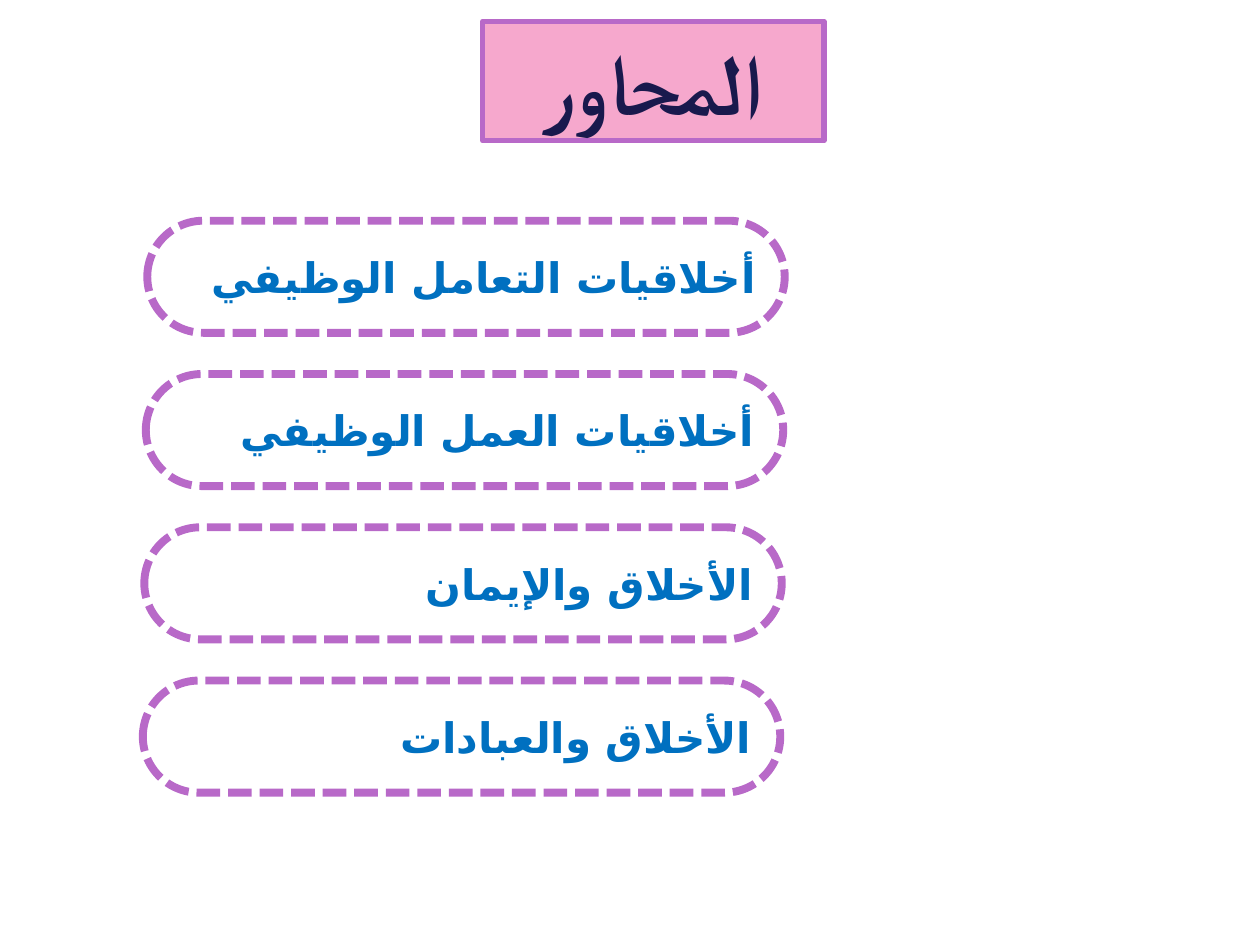
"""Build the slide that lists the four themes of work ethics."""
import lxml.etree
import pptx
import pptx.dml.color
import pptx.enum.dml
import pptx.enum.shapes
import pptx.enum.text
import pptx.oxml.ns
import pptx.util

Cm = pptx.util.Cm
Align = pptx.enum.text.PP_ALIGN


def color(value):
    return pptx.dml.color.RGBColor.from_string(value)


class ThemeSlide:
    border = "B869C8"
    heading_fill, heading_color = "F6A8CD", "19194D"
    theme_fill, theme_color = "FFFFFF", "0070C0"

    def __init__(self, deck):
        self.slide = deck.slides.add_slide(deck.slide_layouts[5])

    def paint(self, shape, fill, width):
        shape.fill.solid()
        shape.fill.fore_color.rgb = color(fill)
        shape.line.color.rgb = color(self.border)
        shape.line.width = pptx.util.Pt(width)

    def label(self, shape, text, size, face, ink, align):
        frame = shape.text_frame
        frame.text = text
        frame.auto_size = pptx.enum.text.MSO_AUTO_SIZE.NONE
        frame.vertical_anchor = pptx.enum.text.MSO_ANCHOR.MIDDLE
        paragraph = frame.paragraphs[0]
        paragraph.alignment = align
        font = paragraph.font
        font.size, font.bold, font.name = pptx.util.Pt(size), True, face
        font.color.rgb = color(ink)
        properties = paragraph._p.get_or_add_pPr()
        defaults = properties.find(pptx.oxml.ns.qn("a:defRPr"))
        lxml.etree.SubElement(defaults, pptx.oxml.ns.qn("a:cs"), typeface=face)
        return properties

    def heading(self, text, left, top, width, height):
        title = self.slide.shapes.title
        title.left, title.top, title.width, title.height = left, top, width, height
        self.paint(title, self.heading_fill, 3)
        self.label(title, text, 49, "Arial", self.heading_color, Align.CENTER)

    def theme(self, text, left, top, width, height):
        pill = self.slide.shapes.add_shape(
            pptx.enum.shapes.MSO_SHAPE.ROUNDED_RECTANGLE, left, top, width, height)
        pill.adjustments[0] = 0.5
        pill.shadow.inherit = False
        self.paint(pill, self.theme_fill, 4.5)
        pill.line.dash_style = pptx.enum.dml.MSO_LINE.SQUARE_DOT
        properties = self.label(
            pill, text, 24, "DejaVu Sans", self.theme_color, Align.RIGHT)
        properties.set("rtl", "1")
        pill.text_frame.word_wrap = False


def main():
    deck = pptx.Presentation()
    deck.slide_width, deck.slide_height = Cm(25.4), Cm(19.05)
    page = ThemeSlide(deck)
    page.heading("المحاور", Cm(9.73), Cm(0.43), Cm(6.88), Cm(2.41))
    themes = (
        "أخلاقيات التعامل الوظيفي",
        "أخلاقيات العمل الوظيفي",
        "الأخلاق والإيمان",
        "الأخلاق والعبادات",
    )
    for row, theme in enumerate(themes):
        page.theme(theme, Cm(2.97 - 0.03 * row), Cm(4.45 + 3.09 * row),
                   Cm(12.85), Cm(2.26))
    deck.save("out.pptx")


if __name__ == "__main__":
    main()
